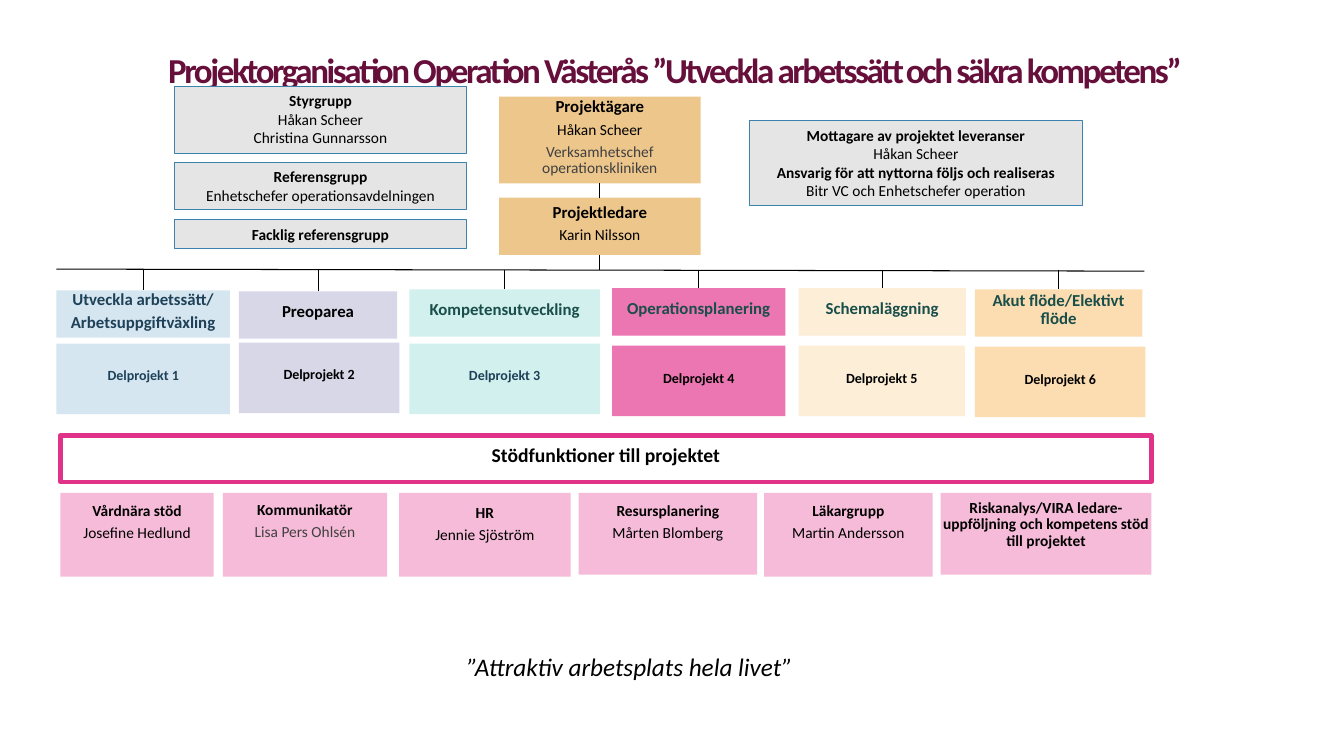
from lxml import etree
from pptx import Presentation
from pptx.dml.color import RGBColor
from pptx.enum.shapes import MSO_CONNECTOR as Connector, MSO_SHAPE as Shape
from pptx.enum.text import MSO_ANCHOR as Anchor, PP_ALIGN as Align
from pptx.oxml.ns import qn
from pptx.util import Inches, Pt

BLACK, GREY, NAVY, TEAL = "000000", "404040", "1E4158", "1A4E4A"
TIGHT = (0.01, 0.01, 0.01, 0.06)
ROOMY = (0.1, 0.05, 0.1, 0.05)


def colour(value):
    return RGBColor.from_string(value)


def bold(text, size=11, ink=BLACK):
    return text, size, ink, True


def plain(text, size=11, ink=BLACK):
    return text, size, ink, False


def write(box, lines, insets, anchor, spacing=1.0, after=0):
    """Fill a shape with centred paragraphs of (text, size, ink, bold)."""
    frame = box.text_frame
    frame.word_wrap = True
    frame.vertical_anchor = anchor
    frame.margin_left, frame.margin_top, frame.margin_right, frame.margin_bottom = map(Inches, insets)
    frame.text = "\n".join(line[0] for line in lines)
    for para, (_, size, ink, is_bold) in zip(frame.paragraphs, lines):
        para.alignment = Align.CENTER
        para.line_spacing = spacing
        para.space_after = Pt(after)
        for span in para.runs:
            span.font.name = "Calibri"
            span.font.size = Pt(size)
            span.font.bold = is_bold
            span.font.color.rgb = colour(ink)


def add_box(page, area, fill=None, line=None, line_width=0.75):
    box = page.shapes.add_shape(Shape.RECTANGLE, *map(Inches, area))
    box.shadow.inherit = False
    if fill:
        box.fill.solid()
        box.fill.fore_color.rgb = colour(fill)
    else:
        box.fill.background()
    if line:
        box.line.color.rgb = colour(line)
        box.line.width = Pt(line_width)
    else:
        box.line.fill.background()
    return box


def add_card(page, area, fill, lines, insets=TIGHT, anchor=Anchor.MIDDLE):
    """Borderless box with compact text."""
    card = add_box(page, area, fill)
    write(card, lines, insets, anchor, spacing=0.9, after=4)
    return card


def add_line(page, start, end):
    line = page.shapes.add_connector(Connector.STRAIGHT, *map(Inches, start + end))
    line.line.color.rgb = colour(BLACK)
    line.line.width = Pt(0.75)
    etree.SubElement(line._element.spPr, qn("a:effectLst"))
    return line


def add_title(page, area):
    title = page.shapes.add_textbox(*map(Inches, area))
    text = "Projektorganisation Operation Västerås ”Utveckla arbetssätt och säkra kompetens”"
    write(title, [bold(text, 25, "670F3B")], (0.1, 0, 0, 0.05), Anchor.BOTTOM, spacing=0.85)
    for span in title.text_frame.paragraphs[0].runs:
        span._r.get_or_add_rPr().set("spc", "-170")


def add_groups(page, left, top):
    """Grey steering, reference and recipient boxes."""
    groups = [
        ((0, 0, 2.9, 0.66),
         [bold("Styrgrupp"), plain("Håkan Scheer"), plain("Christina Gunnarsson")]),
        ((0, 0.75, 2.9, 0.47),
         [bold("Referensgrupp"), plain("Enhetschefer operationsavdelningen")]),
        ((0, 1.32, 2.9, 0.29), [bold("Facklig referensgrupp")]),
        ((5.7, 0.34, 3.31, 0.84),
         [bold("Mottagare av projektet leveranser"), plain("Håkan Scheer"),
          bold("Ansvarig för att nyttorna följs och realiseras"),
          plain("Bitr VC och Enhetschefer operation")]),
    ]
    for (x, y, width, height), lines in groups:
        box = add_box(page, (left + x, top + y, width, height), "E5E5E5", "3C82AF")
        write(box, lines, ROOMY, Anchor.TOP)


def add_leadership(page, left, top, bar_y):
    """Owner above leader, linked to each other and down to the bar."""
    owner = add_card(page, (left, top, 2, 0.86), "DA860B", [
        bold("Projektägare", 12), plain("Håkan Scheer"),
        plain("Verksamhetschef operationskliniken", ink=GREY)])
    leader = add_card(page, (left, top + 1, 2, 0.57), "DA860B", [
        bold("Projektledare", 12), plain("Karin Nilsson")])
    for card in (owner, leader):
        tint = card.fill._xPr.find(qn("a:solidFill"))[0]
        etree.SubElement(tint, qn("a:alpha")).set("val", "47000")
    middle = left + 1
    link = add_line(page, (middle, top + 0.86), (middle, top + 1))
    link.begin_connect(owner, 2)
    link.end_connect(leader, 0)
    stem = add_line(page, (middle, top + 1.57), (middle, bar_y))
    stem.begin_connect(leader, 2)


def add_subprojects(page, left, bar_y):
    """Bar with six hanging subprojects: heading card over number card."""
    add_line(page, (left, bar_y - 0.01), (left + 10.79, bar_y + 0.01))
    # offset, heading top and width, number top and width, fill, inks, heading
    subprojects = [
        (0, 2.88, 1.72, 3.41, 1.72, "D6E6F1", NAVY, NAVY,
         ["Utveckla arbetssätt/", "Arbetsuppgiftväxling"]),
        (1.81, 2.89, 1.57, 3.4, 1.59, "D8D7E8", BLACK, BLACK, ["Preoparea"]),
        (3.5, 2.87, 1.89, 3.41, 1.89, "D1F0EE", TEAL, NAVY, ["Kompetensutveckling"]),
        (5.51, 2.86, 1.72, 3.43, 1.72, "EB76B1", TEAL, BLACK, ["Operationsplanering"]),
        (7.36, 2.86, 1.66, 3.43, 1.65, "FDEED8", TEAL, BLACK, ["Schemaläggning"]),
        (9.11, 2.87, 1.66, 3.44, 1.69, "FBDDB1", TEAL, BLACK, ["Akut flöde/Elektivt flöde"]),
    ]
    for number, (x, head_y, head_w, body_y, body_w, fill, head_ink, body_ink,
                 heading) in enumerate(subprojects, 1):
        x += left
        head = add_card(page, (x, head_y, head_w, 0.47), fill,
                        [bold(text, 12, head_ink) for text in heading])
        add_card(page, (x, body_y, body_w, 0.7), fill,
                 [bold(f"Delprojekt {number}", 10, body_ink)])
        middle = x + head_w / 2
        drop = add_line(page, (middle, bar_y), (middle, head_y))
        drop.end_connect(head, 0)


def add_support(page, left, top):
    """Framed banner above a row of support functions."""
    banner = add_box(page, (left, top, 10.82, 0.46), line="E13289", line_width=3)
    write(banner, [bold("Stödfunktioner till projektet", 14)], TIGHT, Anchor.MIDDLE, 0.9, 4)
    functions = [
        (0, 1.52, 0.83, 0.1, [bold("Vårdnära stöd"), plain("Josefine Hedlund")]),
        (1.61, 1.63, 0.83, 0.09, [bold("Kommunikatör"), plain("Lisa Pers Ohlsén", ink=GREY)]),
        (3.36, 1.7, 0.83, 0.12, [bold("HR"), plain("Jennie Sjöström")]),
        (5.14, 1.77, 0.81, 0.1, [bold("Resursplanering"), plain("Mårten Blomberg")]),
        (6.98, 1.67, 0.83, 0.1, [bold("Läkargrupp"), plain("Martin Andersson")]),
        (8.73, 2.09, 0.81, 0.07,
         [bold("Riskanalys/VIRA ledare- uppföljning och kompetens stöd till projektet")]),
    ]
    for x, width, height, text_top, lines in functions:
        add_card(page, (left + x, top + 0.57, width, height), "F5BBD8", lines,
                 (0.01, text_top, 0.01, 0.06), Anchor.TOP)


def add_motto(page, area):
    motto = page.shapes.add_textbox(*map(Inches, area))
    write(motto, [plain("”Attraktiv arbetsplats hela livet”", 18)], ROOMY, Anchor.TOP)
    motto.text_frame.paragraphs[0].runs[0].font.italic = True


def main():
    deck = Presentation()
    deck.slide_width, deck.slide_height = Inches(13.33), Inches(7.5)
    page = deck.slides.add_slide(deck.slide_layouts[6])
    bar_y = 2.68
    add_title(page, (0.6, 0.4, 12.09, 0.55))
    add_groups(page, 1.73, 0.86)
    add_leadership(page, 4.95, 0.96, bar_y)
    add_subprojects(page, 0.56, bar_y)
    add_support(page, 0.6, 4.32)
    add_motto(page, (2.41, 6.41, 7.68, 0.4))
    deck.save("out.pptx")


if __name__ == "__main__":
    main()
